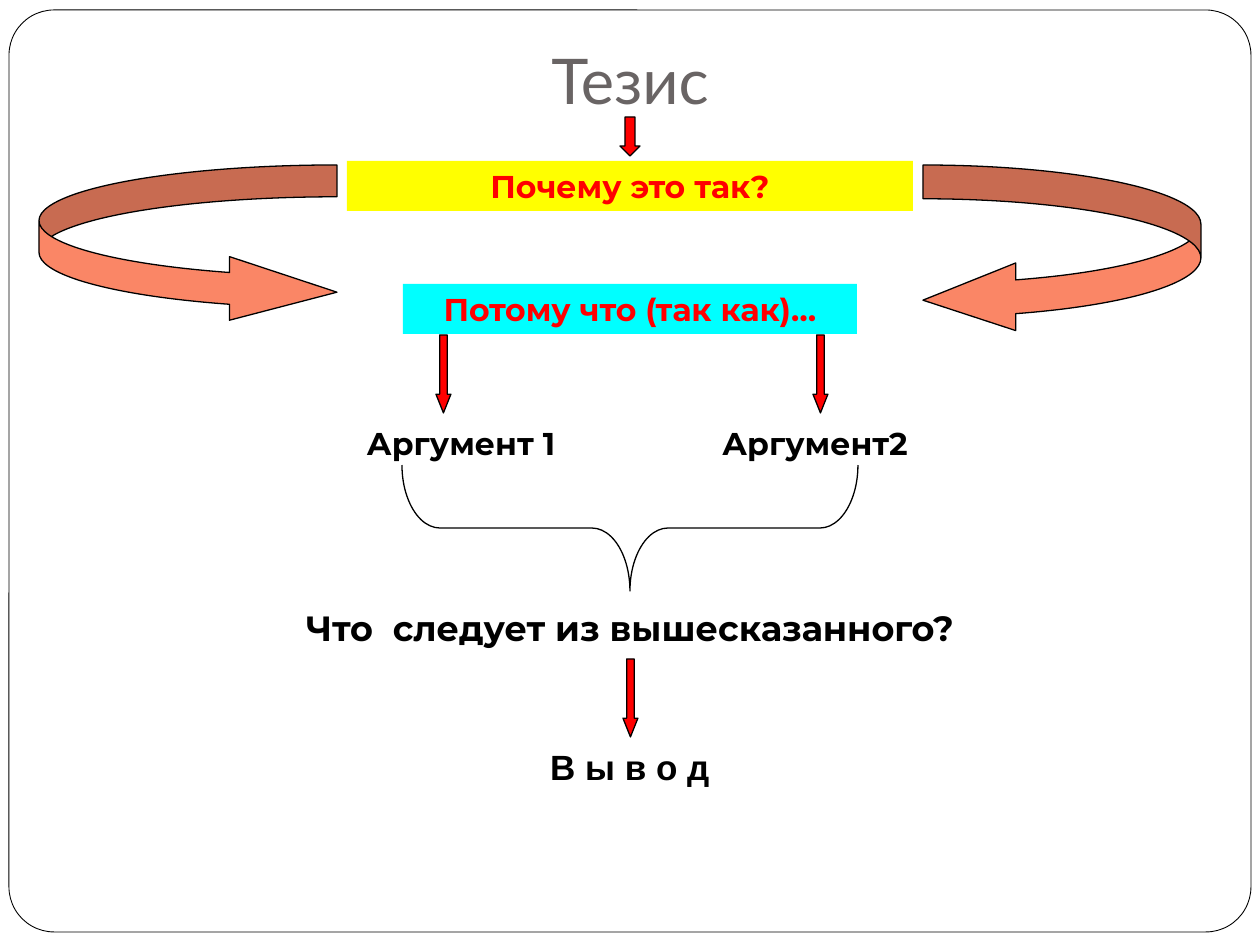
"""Build a slide that shows how a thesis leads through arguments to a conclusion."""
from pptx import Presentation
from pptx.dml.color import RGBColor
from pptx.enum.shapes import MSO_SHAPE
from pptx.enum.text import MSO_ANCHOR, MSO_AUTO_SIZE, PP_ALIGN
from pptx.util import Emu, Pt

PX = 914400 // 126
RECT = MSO_SHAPE.RECTANGLE
ROUND = MSO_SHAPE.ROUNDED_RECTANGLE
DOWN = MSO_SHAPE.DOWN_ARROW
BRACE = MSO_SHAPE.LEFT_BRACE
LEFT = MSO_SHAPE.CURVED_LEFT_ARROW
RIGHT = MSO_SHAPE.CURVED_RIGHT_ARROW
CENTER = PP_ALIGN.CENTER
TOP = MSO_ANCHOR.TOP
MIDDLE = MSO_ANCHOR.MIDDLE
FIXED = MSO_AUTO_SIZE.NONE

BLACK = RGBColor(0x00, 0x00, 0x00)
WHITE = RGBColor(0xFF, 0xFF, 0xFF)
GRAY = RGBColor(0x69, 0x64, 0x64)
RED = RGBColor(0xFF, 0x00, 0x00)
CORAL = RGBColor(0xFA, 0x86, 0x66)
YELLOW = RGBColor(0xFF, 0xFF, 0x00)
CYAN = RGBColor(0x00, 0xFF, 0xFF)


def px(*nums):
    """Turn pixel lengths into EMU."""
    return [Emu(num * PX) for num in nums]


def write(shape, text, font="Montserrat", size=18, color=BLACK, bold=True,
          anchor=MIDDLE):
    """Put one centred line of formatted text in a shape."""
    frame = shape.text_frame
    frame.word_wrap = True
    frame.auto_size = FIXED
    frame.vertical_anchor = anchor
    frame.margin_left = frame.margin_right = 0
    par = frame.paragraphs[0]
    par.alignment = CENTER
    run = par.add_run()
    run.text = text
    run.font.name = font
    run.font.size = Pt(size)
    run.font.bold = bold
    run.font.color.rgb = color


def draw(slide, kind, box, fill=None, line=0.75, adjust=()):
    """Add a preset shape with a flat fill and a thin black line."""
    shape = slide.shapes.add_shape(kind, *px(*box))
    shape.shadow.inherit = False
    if fill is None:
        shape.fill.background()
    else:
        shape.fill.solid()
        shape.fill.fore_color.rgb = fill
    if line:
        shape.line.color.rgb = BLACK
        shape.line.width = Pt(line)
    else:
        shape.line.fill.background()
    for i, value in enumerate(adjust):
        shape.adjustments[i] = value
    return shape


def band(slide, box, text, fill):
    """Add a coloured band with red text."""
    write(draw(slide, RECT, box, fill, line=0), text, color=RED)


def arrow(slide, mid, top, width=15, height=78, head=1.25):
    """Add a red down arrow centred on a given x."""
    box = (mid - width // 2, top, width, height)
    draw(slide, DOWN, box, RED, adjust=(0.5, head))


def label(slide, box, text, **style):
    """Add a text box."""
    write(slide.shapes.add_textbox(*px(*box)), text, **style)


def head(slide, box, text):
    """Place and fill the title placeholder."""
    title = slide.shapes.title
    title.left, title.top, title.width, title.height = px(*box)
    write(title, text, font="Lato", size=36, color=GRAY, bold=False,
          anchor=TOP)


def main():
    """Build and save the slide."""
    deck = Presentation()
    deck.slide_width, deck.slide_height = px(1260, 945)
    slide = deck.slides.add_slide(deck.slide_layouts[5])

    frame = draw(slide, ROUND, (9, 10, 1242, 922), WHITE, 0.5, (0.049,))
    tree = slide.shapes.title.element.getparent()
    tree.insert(tree.index(slide.shapes.title.element), frame.element)
    head(slide, (261, 35, 738, 103), "Тезис")

    draw(slide, LEFT, (923, 165, 278, 169), CORAL, adjust=(0.2, 0.4, 0.549))
    draw(slide, RIGHT, (39, 165, 298, 159), CORAL, adjust=(0.2, 0.4, 0.676))
    band(slide, (347, 161, 566, 50), "Почему это так?", YELLOW)
    band(slide, (403, 284, 454, 50), "Потому что (так как)…", CYAN)

    arrow(slide, 630, 117, width=20, height=39, head=0.497)
    for mid, top in ((443, 335), (820, 335), (630, 659)):
        arrow(slide, mid, top)

    brace = draw(slide, BRACE, (567, 300, 126, 456), adjust=(0.302, 0.5))
    brace.rotation = 270

    label(slide, (341, 418, 240, 50), "Аргумент 1")
    label(slide, (695, 418, 240, 50), "Аргумент2")
    label(slide, (233, 600, 794, 54), "Что  следует из вышесказанного?", size=20)
    label(slide, (537, 739, 186, 55), "В ы в о д", font="Arial", size=20)

    deck.save("out.pptx")


if __name__ == "__main__":
    main()
